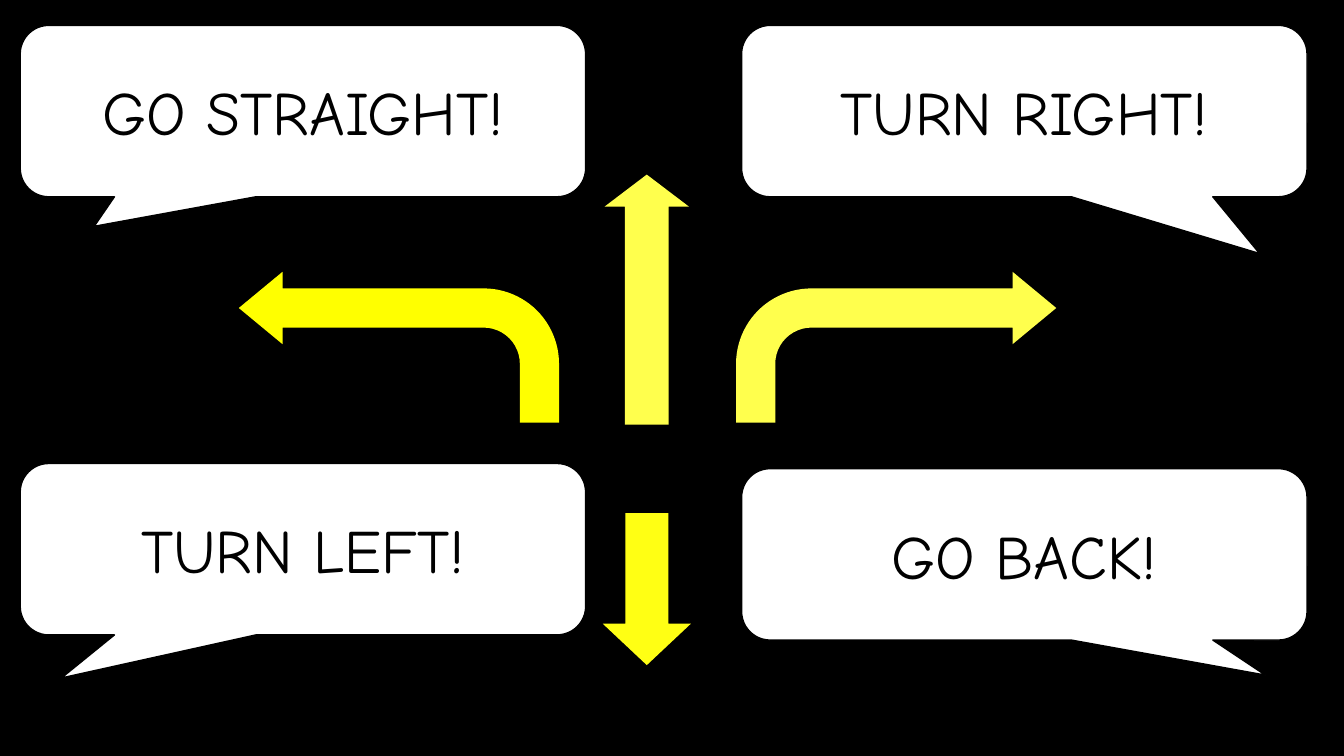
from dataclasses import dataclass

import pptx
import pptx.dml.color
import pptx.enum.shapes
import pptx.enum.text
import pptx.util
from pptx.util import Cm

SHAPES = pptx.enum.shapes.MSO_SHAPE
FONT = "Comic Neue"
BLACK, WHITE = "000000", "FFFFFF"
LEFT_COLUMN, RIGHT_COLUMN = 0.51, 18.69
CALLOUT_WIDTH, CALLOUT_HEIGHT = 14.25, 4.32
CORNER = 0.167
BENT = (0.26, 0.24, 0.29, 0.5)


@dataclass
class Arrow:
    kind: int
    left: float
    top: float
    width: float
    height: float
    color: str
    adjustments: tuple[float, ...]
    flipped: bool = False
    rotation: float = 0


@dataclass
class Callout:
    text: str
    left: float
    top: float
    tip_x: float
    tip_y: float


ARROWS = [
    Arrow(SHAPES.BENT_ARROW, 18.55, 6.85, 8.07, 3.8, "FFFF4D", BENT),
    Arrow(SHAPES.BENT_ARROW, 6.02, 6.85, 8.07, 3.8, "FFFF00", BENT, flipped=True),
    Arrow(SHAPES.UP_ARROW, 15.24, 4.4, 2.12, 6.3, "FFFF4D", (0.52, 0.38)),
    Arrow(SHAPES.UP_ARROW, 15.19, 12.93, 2.22, 3.83, "FFFF14", (0.49, 0.47), rotation=180),
]

CALLOUTS = [
    Callout("GO STRAIGHT!", LEFT_COLUMN, 0.64, -0.369, 0.672),
    Callout("TURN RIGHT!", RIGHT_COLUMN, 0.64, 0.416, 0.831),
    Callout("GO BACK!", RIGHT_COLUMN, 11.81, 0.426, 0.704),
    Callout("TURN LEFT!", LEFT_COLUMN, 11.68, -0.427, 0.751),
]


def rgb(color: str) -> pptx.dml.color.RGBColor:
    return pptx.dml.color.RGBColor.from_string(color)


def add_filled_shape(slide, kind: int, box: tuple[float, ...], color: str,
                     adjustments: tuple[float, ...]):
    shape = slide.shapes.add_shape(kind, *(Cm(length) for length in box))
    shape.shadow.inherit = False
    shape.fill.solid()
    shape.fill.fore_color.rgb = rgb(color)
    for index, value in enumerate(adjustments):
        shape.adjustments[index] = value
    return shape


def draw_arrow(slide, arrow: Arrow) -> None:
    box = (arrow.left, arrow.top, arrow.width, arrow.height)
    shape = add_filled_shape(slide, arrow.kind, box, arrow.color, arrow.adjustments)
    shape.line.fill.background()
    shape.rotation = arrow.rotation
    if arrow.flipped:
        shape.element.spPr.xfrm.set("flipH", "1")


def draw_callout(slide, callout: Callout) -> None:
    box = (callout.left, callout.top, CALLOUT_WIDTH, CALLOUT_HEIGHT)
    shape = add_filled_shape(slide, SHAPES.ROUNDED_RECTANGULAR_CALLOUT, box, WHITE,
                             (callout.tip_x, callout.tip_y, CORNER))
    shape.line.color.rgb = rgb(BLACK)
    shape.line.width = pptx.util.Pt(1)
    text_frame = shape.text_frame
    text_frame.text = callout.text
    text_frame.word_wrap = True
    text_frame.vertical_anchor = pptx.enum.text.MSO_ANCHOR.MIDDLE
    paragraph = text_frame.paragraphs[0]
    paragraph.alignment = pptx.enum.text.PP_ALIGN.CENTER
    font = paragraph.runs[0].font
    font.name = FONT
    font.size = pptx.util.Pt(44)
    font.color.rgb = rgb(BLACK)


def main() -> None:
    presentation = pptx.Presentation()
    presentation.slide_width = Cm(33.87)
    presentation.slide_height = Cm(19.05)
    slide = presentation.slides.add_slide(presentation.slide_layouts[6])

    # Background
    slide.background.fill.solid()
    slide.background.fill.fore_color.rgb = rgb(BLACK)

    # Direction arrows
    for arrow in ARROWS:
        draw_arrow(slide, arrow)

    # Spoken directions
    for callout in CALLOUTS:
        draw_callout(slide, callout)

    presentation.save("out.pptx")


if __name__ == "__main__":
    main()
